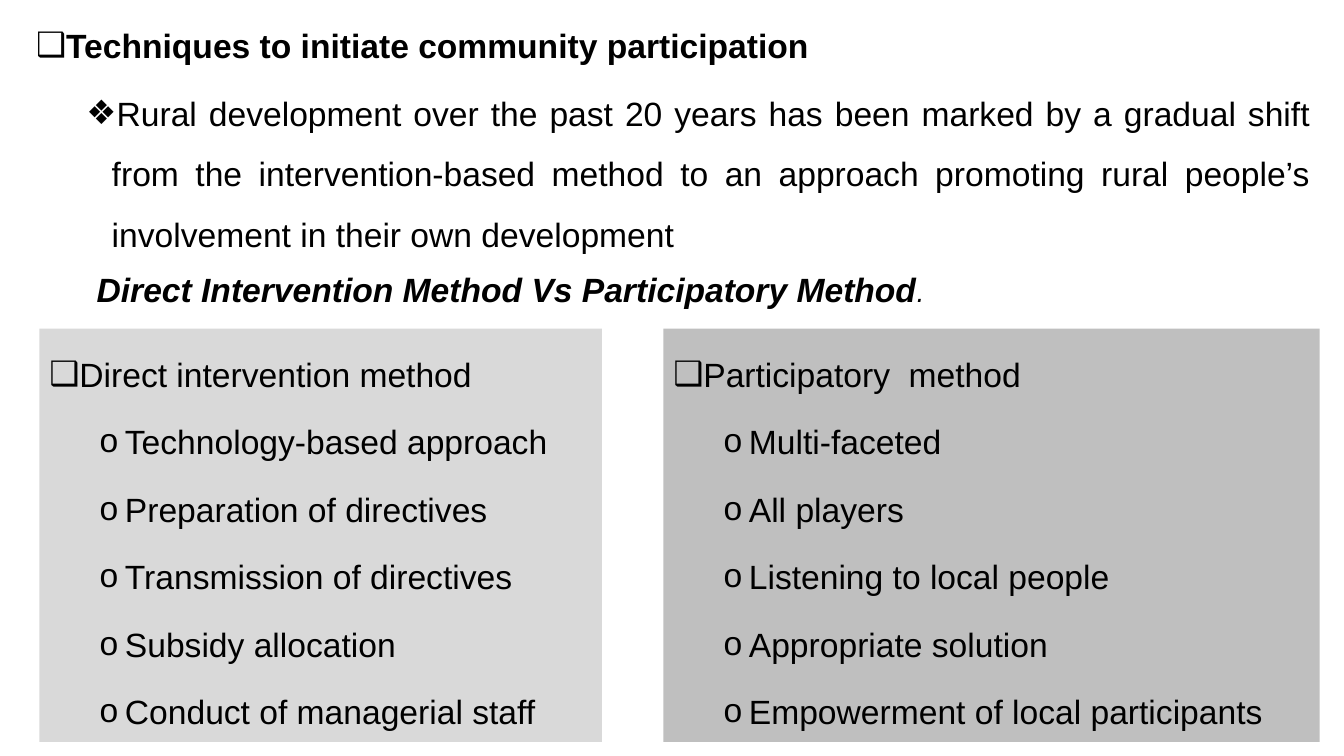
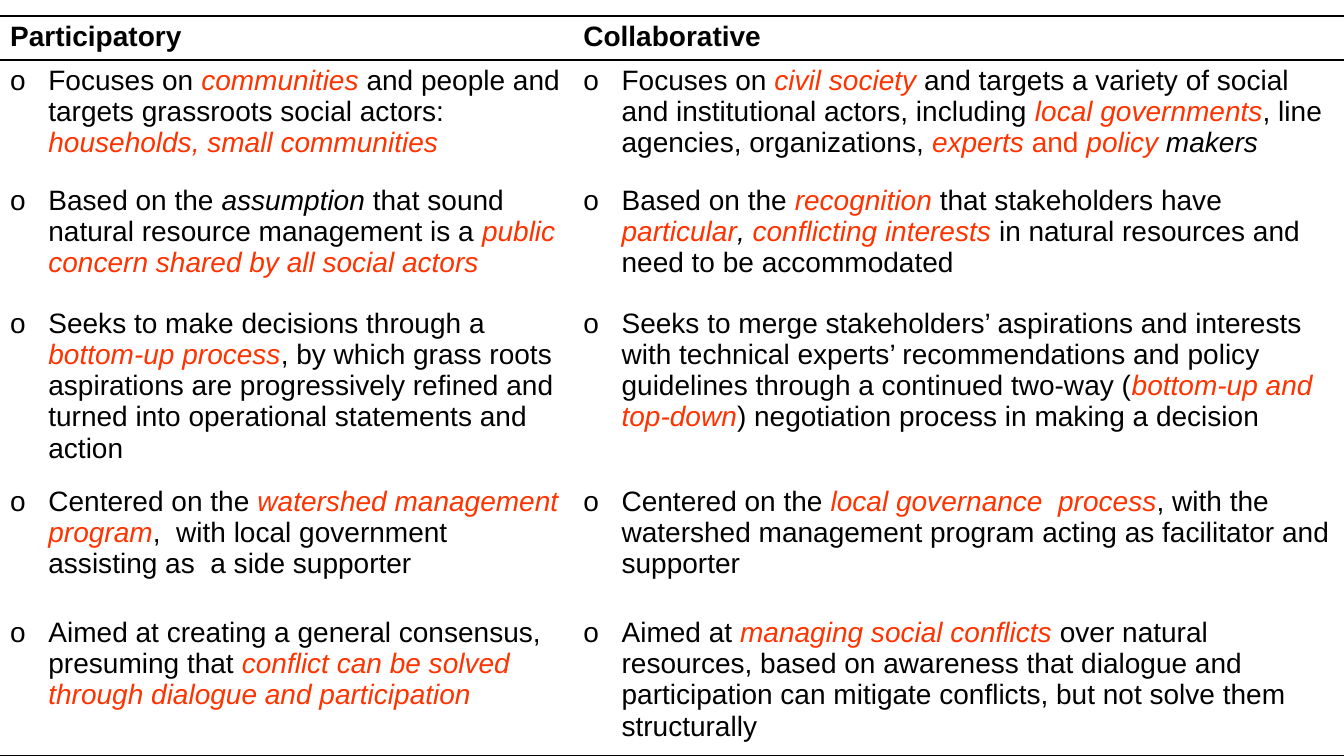
from dataclasses import dataclass
from typing import NamedTuple

from lxml.etree import SubElement
from pptx import Presentation
from pptx.dml.color import RGBColor
from pptx.enum.shapes import MSO_SHAPE
from pptx.enum.text import MSO_ANCHOR, PP_ALIGN
from pptx.oxml import parse_xml
from pptx.oxml.ns import nsdecls, qn
from pptx.util import Inches, Pt

W, H = Inches(13.33), Inches(7.5)
FONT, SYMBOL = "Arial", "DejaVu Sans"
COLORS = {"ink": "000000", "accent": "FF3300", "light": "D9D9D9", "mid": "BFBFBF"}
COLUMNS = (42.65, 57.35)
ROWS = (5.6, 15.87, 16.27, 22.93, 17.33, 17.33)


class Box(NamedTuple):
    """Position and size in percent of the slide."""
    x: float
    y: float
    w: float
    h: float


class Run(NamedTuple):
    text: str
    color: str = "ink"
    italic: bool = False
    bold: bool = False
    font: str = FONT
    size: float = 0


@dataclass(frozen=True)
class Level:
    bullet: str
    margin: float
    before: float = 0
    spacing: float = 1.0
    align: PP_ALIGN = PP_ALIGN.LEFT
    hanging: float = 0.25
    font: str = FONT


@dataclass(frozen=True)
class Card:
    box: Box
    fill: str
    title: str
    items: tuple[str, ...]


HEADING = Level("❑", 0.25, 10, 1.5, PP_ALIGN.JUSTIFY, font=SYMBOL)
POINT = Level("❖", 0.75, 5, 1.5, PP_ALIGN.JUSTIFY, font=SYMBOL)
ITEM = Level("o", 0.75, 5, 1.5, PP_ALIGN.JUSTIFY)
CELL = Level("o", 0.38, hanging=0.38)
HEADER = Level("", 0, align=PP_ALIGN.JUSTIFY, hanging=0)
PLAIN = Level("", 0, hanging=0)


def hot(text: str) -> Run:
    return Run(text, "accent", True)


def slanted(text: str) -> Run:
    return Run(text, italic=True)


CARDS = (
    Card(Box(2.93, 43.47, 41.86, 54.67), "light", "Direct intervention method",
         ("Technology-based approach", "Preparation of directives",
          "Transmission of directives", "Subsidy allocation",
          "Conduct of managerial staff")),
    Card(Box(49.36, 43.47, 48.84, 54.67), "mid", "Participatory  method",
         ("Multi-faceted", "All players", "Listening to local people",
          "Appropriate solution", "Empowerment of local participants")),
)

COMPARISON = (
    ((Run("Participatory ", bold=True),), (Run("Collaborative", bold=True),)),
    ((Run("Focuses on "), hot("communities"),
      Run(" and people and targets grassroots social actors: "),
      hot("households, small communities")),
     (Run("Focuses on "), hot("civil society"),
      Run(" and targets a variety of social and institutional actors, including "),
      hot("local governments"), Run(", line agencies, organizations, "),
      hot("experts"), Run(" and ", "accent"), hot("policy"), slanted(" makers"))),
    ((Run("Based on the "), slanted("assumption "),
      Run("that sound natural resource management is a "),
      hot("public concern shared by all social actors")),
     (Run("Based on the "), hot("recognition"), Run(" that stakeholders have "),
      hot("particular"), slanted(", "), hot("conflicting interests"),
      Run(" in natural resources and need to be accommodated"))),
    ((Run("Seeks to make decisions through a "), hot("bottom-up process"),
      Run(", by which grass roots aspirations are progressively refined "
          "and turned into operational statements and action")),
     (Run("Seeks to merge stakeholders’ aspirations and interests with technical "
          "experts’ recommendations and policy guidelines through a continued two-way ("),
      hot("bottom-up and top-down"), Run(") negotiation process in making a decision"))),
    ((Run("Centered on the "), hot("watershed management program"),
      Run(",  with local government assisting as  a side supporter")),
     (Run("Centered on the "), hot("local governance  process"),
      Run(", with the watershed management program acting as facilitator and supporter"))),
    ((Run("Aimed at creating a general consensus, presuming that "),
      hot("conflict can be solved through dialogue and participation")),
     (Run("Aimed at "), hot("managing social conflicts"),
      Run(" over natural resources, based on awareness that dialogue and "
          "participation can mitigate conflicts, but not solve them structurally"))),
)


def place(box: Box) -> tuple[int, int, int, int]:
    return tuple(int(share * side / 100) for share, side in zip(box, (W, H, W, H)))


def write(tf, paragraphs, size: float) -> None:
    tf.word_wrap = True
    for i, (level, runs) in enumerate(paragraphs):
        p = tf.add_paragraph() if i else tf.paragraphs[0]
        p.alignment, p.line_spacing = level.align, level.spacing
        p.space_before = Pt(level.before)
        if level.bullet:
            pPr = p._p.get_or_add_pPr()
            pPr.set("marL", str(Inches(level.margin)))
            pPr.set("indent", str(-Inches(level.hanging)))
            SubElement(pPr, qn("a:buFont")).set("typeface", level.font)
            SubElement(pPr, qn("a:buChar")).set("char", level.bullet)
        for run in runs:
            r = p.add_run()
            r.text = run.text
            r.font.name, r.font.size = run.font, Pt(run.size or size)
            r.font.bold, r.font.italic = run.bold, run.italic
            r.font.color.rgb = RGBColor.from_string(COLORS[run.color])


def add_text(s, box: Box, paragraphs) -> None:
    write(s.shapes.add_textbox(*place(box)).text_frame, paragraphs, 24)


def add_card(s, card: Card) -> None:
    sp = s.shapes.add_shape(MSO_SHAPE.RECTANGLE, *place(card.box))
    sp.shadow.inherit = False
    sp.fill.solid()
    sp.fill.fore_color.rgb = RGBColor.from_string(COLORS[card.fill])
    sp.line.fill.background()
    sp.text_frame.vertical_anchor = MSO_ANCHOR.TOP
    items = [(ITEM, (Run(item),)) for item in card.items]
    write(sp.text_frame, [(HEADING, (Run(card.title),)), *items], 24)


def set_borders(cell, top: bool, bottom: bool) -> None:
    tcPr = cell._tc.get_or_add_tcPr()
    for i, (side, shown) in enumerate(zip("LRTB", (False, False, top, bottom))):
        fill = (f'<a:solidFill><a:srgbClr val="{COLORS["ink"]}"/></a:solidFill>'
                if shown else "<a:noFill/>")
        width = Pt(2) if shown else 0
        tcPr.insert(i, parse_xml(
            f'<a:ln{side} {nsdecls("a")} w="{width}">{fill}</a:ln{side}>'))


def add_comparison(s) -> None:
    box = Box(0, 2.13, sum(COLUMNS), sum(ROWS))
    table = s.shapes.add_table(len(ROWS), len(COLUMNS), *place(box)).table
    table.first_row = table.horz_banding = False
    for column, share in zip(table.columns, COLUMNS):
        column.width = int(W * share / 100)
    for i, (row, share) in enumerate(zip(table.rows, ROWS)):
        row.height = int(H * share / 100)
        for cell, runs in zip(row.cells, COMPARISON[i]):
            cell.fill.background()
            set_borders(cell, top=i < 2, bottom=i in (0, len(ROWS) - 1))
            write(cell.text_frame, [(CELL if i else HEADER, runs)], 20)


def build_techniques(s) -> None:
    add_text(s, Box(1.95, 0, 96.25, 100), [
        (HEADING, (Run("Techniques to initiate community participation", bold=True),)),
        (POINT, (Run("Rural development over the past 20 years has been marked by a "
                     "gradual shift from the intervention-based method to an approach "
                     "promoting rural people’s involvement in their own development "),)),
    ])
    for card in CARDS:
        add_card(s, card)
    add_text(s, Box(6.45, 34.93, 76.74, 6.67), [(PLAIN, (
        Run("Direct Intervention Method Vs Participatory Method", italic=True, bold=True),
        Run(".", italic=True, font=SYMBOL, size=18)))])


def main() -> None:
    prs = Presentation()
    prs.slide_width, prs.slide_height = W, H
    for build in (build_techniques, add_comparison):
        build(prs.slides.add_slide(prs.slide_layouts[6]))
    prs.save("out.pptx")


if __name__ == "__main__":
    main()
